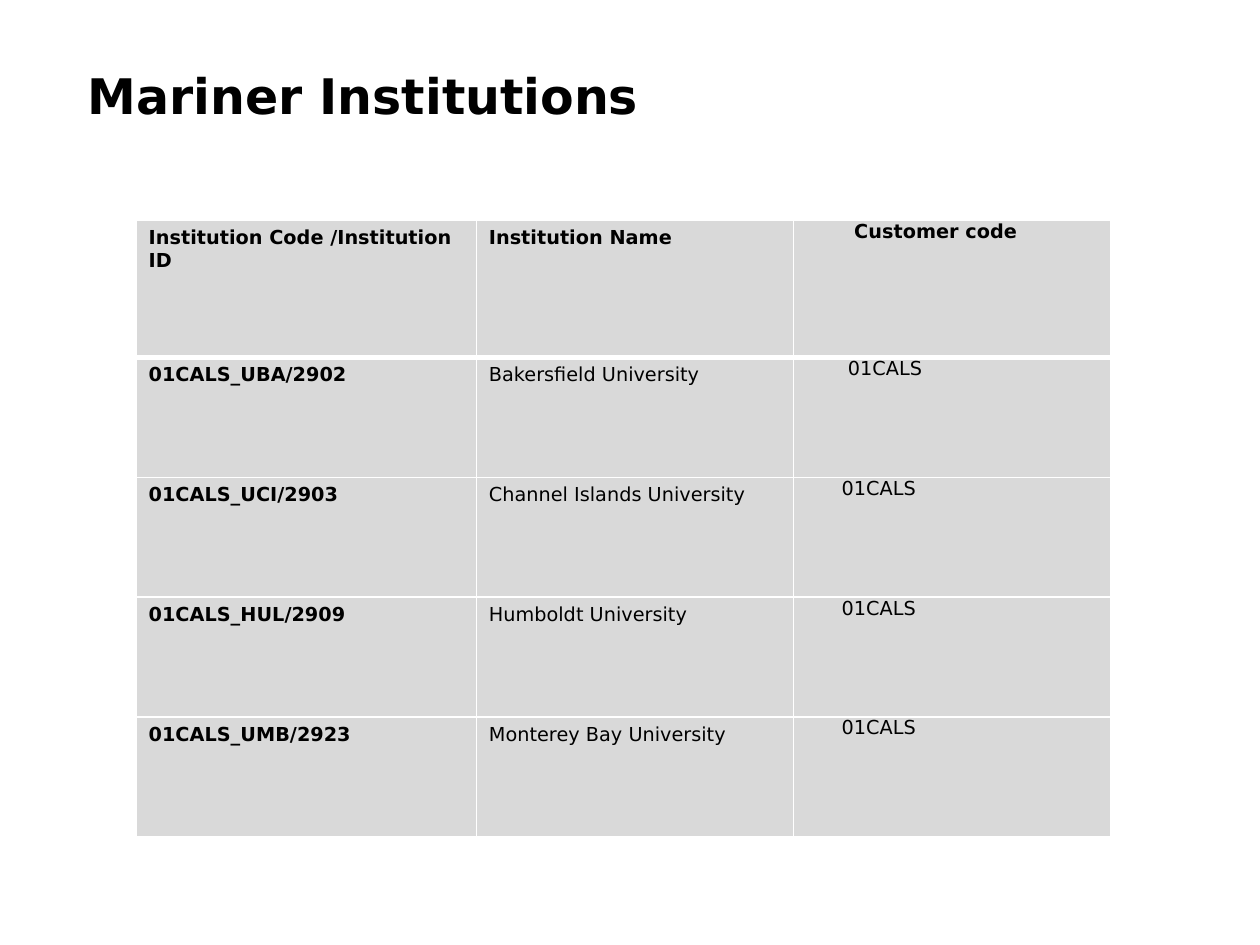
from typing import NamedTuple

import pptx
import pptx.dml.color
import pptx.enum.text
import pptx.oxml
import pptx.oxml.ns
import pptx.util
from pptx.util import Inches

FONT = "DejaVu Sans"
BLACK, WHITE, GREY = "000000", "FFFFFF", "D9D9D9"


class Institution(NamedTuple):
    code: str
    name: str
    customer: str
    customer_indent: float


INSTITUTIONS = [
    Institution("Institution Code /Institution ID", "Institution Name", "Customer code", 0.48),
    Institution("01CALS_UBA/2902", "Bakersfield University", "01CALS", 0.43),
    Institution("01CALS_UCI/2903", "Channel Islands University", "01CALS", 0.38),
    Institution("01CALS_HUL/2909", "Humboldt University", "01CALS", 0.38),
    Institution("01CALS_UMB/2923", "Monterey Bay University", "01CALS", 0.38),
]
COLUMN_WIDTHS = [2.7, 2.52, 2.52]
HEADER_HEIGHT, ROW_HEIGHT = 1.09, 0.95


def color(hex_value: str) -> pptx.dml.color.RGBColor:
    return pptx.dml.color.RGBColor.from_string(hex_value)


def write(frame, text: str, size: float, bold: bool) -> None:
    paragraph = frame.paragraphs[0]
    paragraph.alignment = pptx.enum.text.PP_ALIGN.LEFT
    run = paragraph.add_run()
    run.text = text
    font_format = {"name": FONT, "size": pptx.util.Pt(size), "bold": bold}
    for attribute, value in font_format.items():
        setattr(run.font, attribute, value)
    run.font.color.rgb = color(BLACK)


def add_borders(cell, widths: dict[str, float]) -> None:
    # Border elements must come before the fill in the cell properties
    properties = cell._tc.get_or_add_tcPr()
    for position, (side, width) in enumerate(widths.items()):
        border = pptx.oxml.parse_xml(
            f'<a:ln{side} {pptx.oxml.ns.nsdecls("a")} w="{pptx.util.Pt(width)}">'
            f'<a:solidFill><a:srgbClr val="{WHITE}"/></a:solidFill></a:ln{side}>'
        )
        properties.insert(position, border)


def fill_row(table, row: int, institution: Institution) -> None:
    is_header = row == 0
    texts = (institution.code, institution.name, institution.customer)
    for column, text in enumerate(texts):
        cell = table.cell(row, column)
        cell.fill.solid()
        cell.fill.fore_color.rgb = color(GREY)
        add_borders(cell, {
            "L": 1, "R": 1,
            "T": 3 if row == 1 else 1,
            "B": 3 if is_header else 1,
        })
        write(cell.text_frame, text, 11, is_header or column == 0)

    # The customer code sits at the top of its cell, indented
    margins = {
        "margin_left": Inches(institution.customer_indent),
        "margin_top": 0, "margin_right": 0, "margin_bottom": 0,
    }
    for attribute, value in margins.items():
        setattr(table.cell(row, 2), attribute, value)


def main() -> None:
    presentation = pptx.Presentation()
    presentation.slide_width, presentation.slide_height = Inches(10), Inches(7.5)
    slide = presentation.slides.add_slide(presentation.slide_layouts[6])

    # Title
    title = slide.shapes.add_textbox(Inches(0.6), 0, Inches(8.5), Inches(1.04))
    title.text_frame.word_wrap = True
    title.text_frame.vertical_anchor = pptx.enum.text.MSO_ANCHOR.BOTTOM
    write(title.text_frame, "Mariner Institutions", 28, True)

    # Table of institutions
    row_heights = [HEADER_HEIGHT] + [ROW_HEIGHT] * (len(INSTITUTIONS) - 1)
    table = slide.shapes.add_table(
        len(INSTITUTIONS), len(COLUMN_WIDTHS), Inches(1.08), Inches(1.75),
        Inches(sum(COLUMN_WIDTHS)), Inches(sum(row_heights)),
    ).table
    for column, width in zip(table.columns, COLUMN_WIDTHS):
        column.width = Inches(width)
    for row, (height, institution) in enumerate(zip(row_heights, INSTITUTIONS)):
        table.rows[row].height = Inches(height)
        fill_row(table, row, institution)

    presentation.save("out.pptx")


if __name__ == "__main__":
    main()
